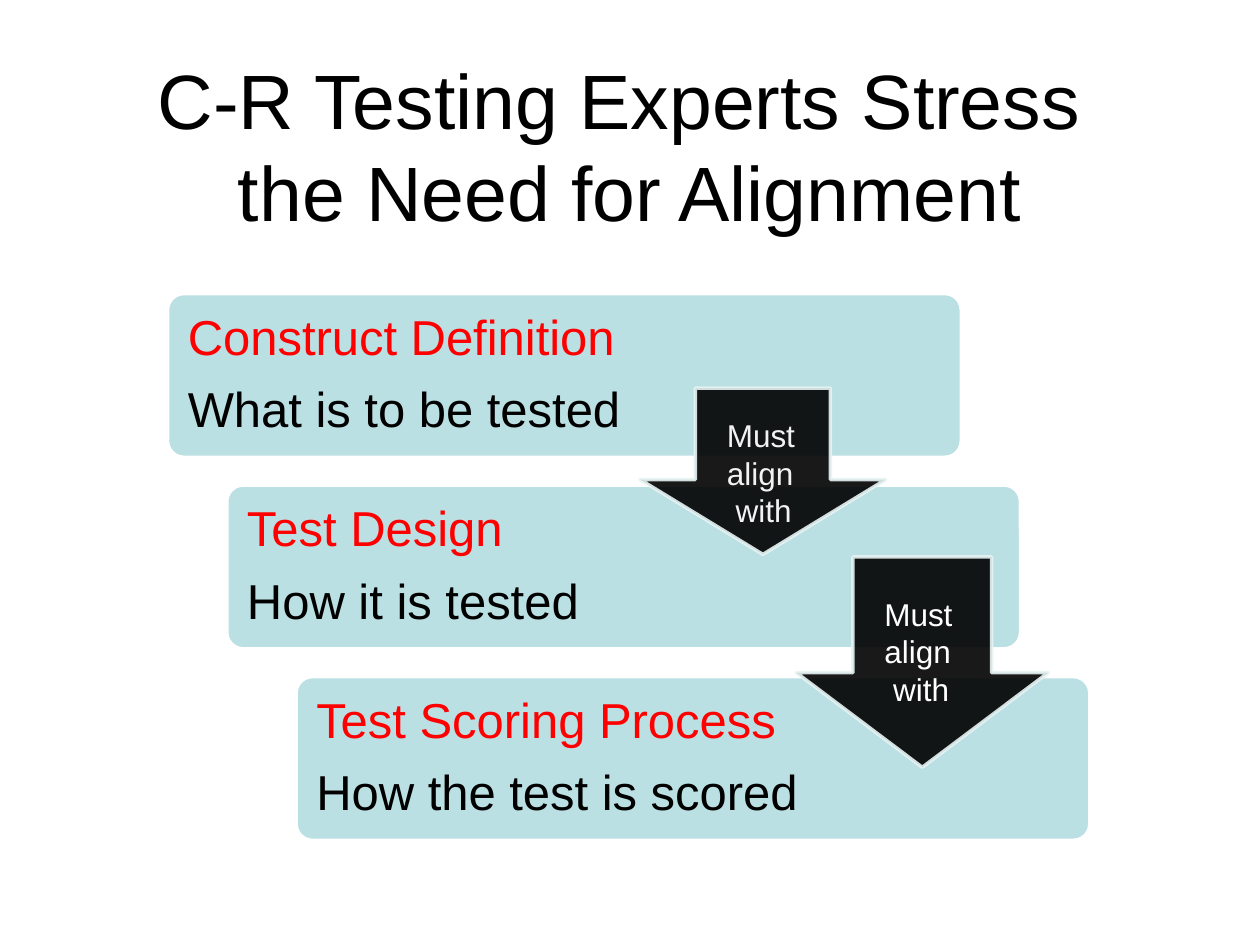
"""Build a slide on aligning construct, test design and scoring."""
from lxml.etree import SubElement
from pptx import Presentation
from pptx.dml.color import RGBColor
from pptx.enum.shapes import MSO_SHAPE
from pptx.enum.text import MSO_ANCHOR, MSO_AUTO_SIZE, PP_ALIGN
from pptx.oxml.ns import qn
from pptx.util import Inches, Pt

BLACK = RGBColor(0x00, 0x00, 0x00)
WHITE = RGBColor(0xFF, 0xFF, 0xFF)
RED = RGBColor(0xFF, 0x00, 0x00)
TEAL = RGBColor(0xBB, 0xE0, 0xE3)
PALE = RGBColor(0xE7, 0xF3, 0xF4)
GREY = RGBColor(0xF2, 0xF2, 0xF2)


def write(frame, lines, size, colors, **format):
    frame.text = "\n".join(lines)
    for para, color in zip(frame.paragraphs, colors):
        for name, value in format.items():
            setattr(para, name, value)
        for run in para.runs:
            run.font.name = "Arial"
            run.font.size = Pt(size)
            run.font.color.rgb = color


def draw(kind, box, adjust, fill, line):
    shape = slide.shapes.add_shape(kind, *map(Inches, box))
    for i, value in enumerate(adjust):
        shape.adjustments[i] = value
    shape.shadow.inherit = False
    shape.fill.solid()
    shape.fill.fore_color.rgb = fill
    shape.line.color.rgb = line
    shape.line.width = Pt(2)
    return shape


deck = Presentation()
deck.slide_width, deck.slide_height = Inches(10), Inches(7.5)
slide = deck.slides.add_slide(deck.slide_layouts[5])

title = slide.shapes.title
title.left, title.top = Inches(0.5), Inches(0.3)
title.width, title.height = Inches(9), Inches(1.7)
write(title.text_frame, ["C-R Testing Experts Stress \vthe Need for Alignment"],
      44, [BLACK], alignment=PP_ALIGN.CENTER)
title.text_frame.auto_size = MSO_AUTO_SIZE.NONE
title.text_frame.vertical_anchor = MSO_ANCHOR.MIDDLE

steps = [
    (1.33, "Construct Definition", "What is to be tested"),
    (1.8, "Test Design", "How it is tested"),
    (2.35, "Test Scoring Process", "How the test is scored"),
]
inset = {f"margin_{side}": Inches(0.12)
         for side in ("left", "top", "right", "bottom")}
for row, (left, head, body) in enumerate(steps):
    top = 2.33 + 1.52 * row
    draw(MSO_SHAPE.ROUNDED_RECTANGLE, (left, top, 6.3, 1.3), [0.1], TEAL, WHITE)
    label = slide.shapes.add_textbox(
        Inches(left + 0.04), Inches(top + 0.04), Inches(4.85), Inches(1.22))
    frame = label.text_frame
    for name, value in inset.items():
        setattr(frame, name, value)
    frame.word_wrap = True
    frame.vertical_anchor = MSO_ANCHOR.MIDDLE
    write(frame, [head, body], 28, [RED, BLACK],
          line_spacing=0.9, space_after=Pt(11))

for box in [(5.08, 3.08, 1.95, 1.32), (6.32, 4.42, 2, 1.67)]:
    arrow = draw(MSO_SHAPE.DOWN_ARROW, box, [0.55, 0.45], BLACK, PALE)
    for color in arrow.element.spPr.iter(qn("a:srgbClr")):
        SubElement(color, qn("a:alpha"), val="90000")

notes = [
    ((5.67, 3.25, 0.92, 1.01), GREY, True),
    ((6.92, 4.67, 0.75, 1.01), WHITE, False),
]
for box, color, wrap in notes:
    frame = slide.shapes.add_textbox(*map(Inches, box)).text_frame
    frame.word_wrap = wrap
    frame.auto_size = MSO_AUTO_SIZE.SHAPE_TO_FIT_TEXT
    write(frame, ["Must", "align", " with"], 18, [color] * 3)

deck.save("out.pptx")
